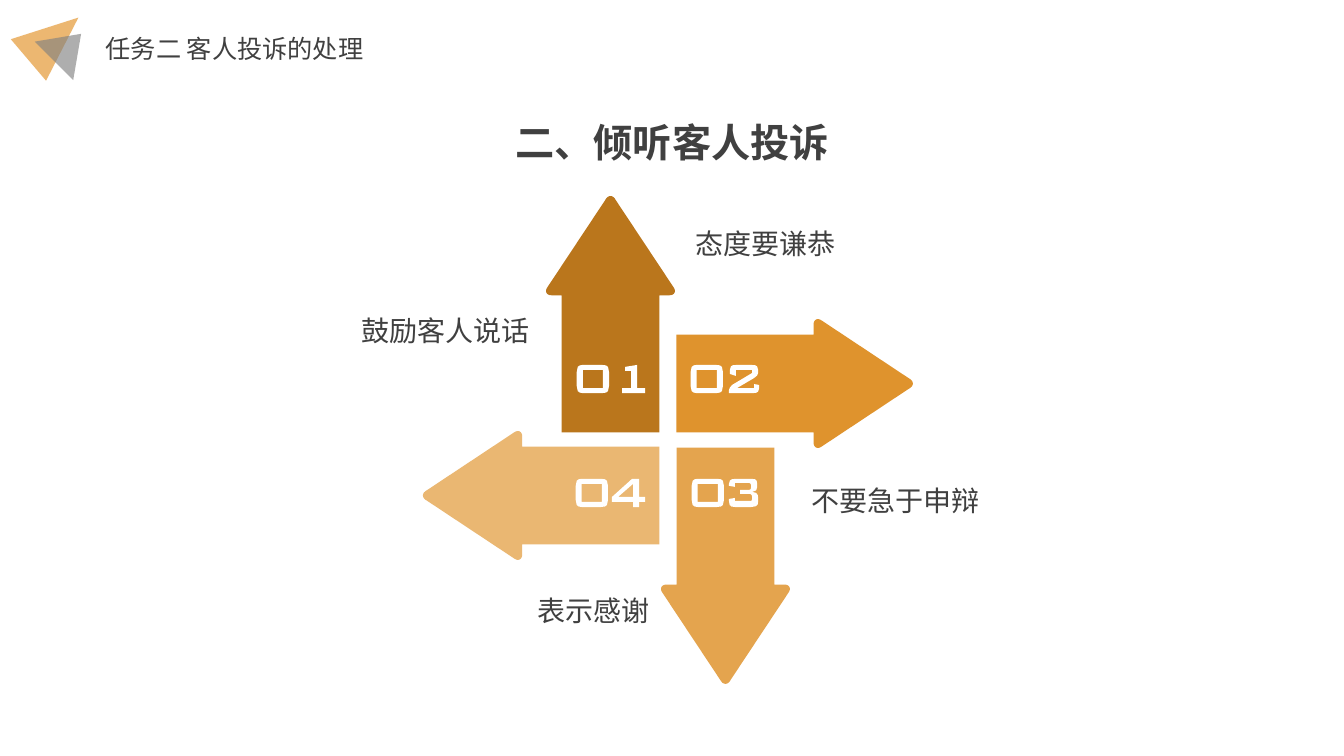
from lxml import etree
from pptx import Presentation
from pptx.dml.color import RGBColor
from pptx.enum.shapes import MSO_SHAPE
from pptx.enum.text import MSO_AUTO_SIZE, PP_ALIGN
from pptx.oxml.ns import qn
from pptx.util import Inches, Pt

LEFT, CENTER, RIGHT = PP_ALIGN.LEFT, PP_ALIGN.CENTER, PP_ALIGN.RIGHT
TRIANGLE = MSO_SHAPE.ISOSCELES_TRIANGLE
GROW = MSO_AUTO_SIZE.SHAPE_TO_FIT_TEXT

INK = RGBColor(0x40, 0x40, 0x40)
WHITE = RGBColor(0xFF, 0xFF, 0xFF)
GRAY = RGBColor(0x80, 0x80, 0x80)
ORANGE = RGBColor(0xE1, 0x8E, 0x1F)
BROWN = RGBColor(0xBA, 0x76, 0x1C)
AMBER = RGBColor(0xDF, 0x93, 0x2D)
HONEY = RGBColor(0xE4, 0xA4, 0x4E)
SAND = RGBColor(0xEA, 0xB7, 0x72)

prs = Presentation()
prs.slide_width, prs.slide_height = Inches(13.33), Inches(7.5)
slide = prs.slides.add_slide(prs.slide_layouts[6])


def add_outline(contours, color):
    """Draw closed contours, given in inches, as one filled shape."""
    contours = [[(Inches(x), Inches(y)) for x, y in c] for c in contours]
    builder = slide.shapes.build_freeform(*contours[0][0])
    builder.add_line_segments(contours[0][1:], close=True)
    for contour in contours[1:]:
        builder.move_to(*contour[0])
        builder.add_line_segments(contour[1:], close=True)
    outline = builder.convert_to_shape()
    outline.shadow.inherit = False
    outline.fill.solid()
    outline.fill.fore_color.rgb = color
    outline.line.fill.background()


def add_text(text, box, size, align=LEFT, spacing=1.0, font="Arial", bold=False):
    frame = slide.shapes.add_textbox(*map(Inches, box)).text_frame
    frame.word_wrap = True
    frame.auto_size = GROW
    frame.text = text
    paragraph = frame.paragraphs[0]
    paragraph.alignment = align
    paragraph.line_spacing = spacing
    run = paragraph.runs[0]
    run.font.name, run.font.size, run.font.bold = font, Pt(size), bold
    run.font.color.rgb = INK


# Header: two translucent triangles and the task name
for box, angle, color in [((0.26, 0.06, 0.54, 0.65), 49.7, ORANGE),
                          ((0.40, 0.28, 0.54, 0.38), 45.1, GRAY)]:
    triangle = slide.shapes.add_shape(TRIANGLE, *map(Inches, box))
    triangle.rotation = angle
    triangle.shadow.inherit = False
    triangle.fill.solid()
    triangle.fill.fore_color.rgb = color
    triangle.line.fill.background()
    tint = triangle.fill._xPr.find(qn("a:solidFill"))[0]
    etree.SubElement(tint, qn("a:alpha")).set("val", "63000")
add_text("任务二 客人投诉的处理", (0.95, 0.28, 7.8, 0.4), 18, font="DejaVu Sans")

# Upward arrow, measured from its inner corner, with rounded head corners
head_corners = [
    [(0.10, -1.36), (0.15, -1.36), (0.17, -1.40), (0.14, -1.44)],
    [(-0.43, -2.30), (-0.46, -2.36), (-0.51, -2.36), (-0.54, -2.30)],
    [(-1.11, -1.44), (-1.14, -1.40), (-1.12, -1.36), (-1.07, -1.36)],
]
STEPS = 8
arrow = [(0, 0), (0, -1.36)]
for corner in head_corners:
    for step in range(STEPS + 1):
        t = step / STEPS
        weights = ((1 - t) ** 3, 3 * t * (1 - t) ** 2, 3 * t ** 2 * (1 - t), t ** 3)
        arrow.append(tuple(sum(w * p[axis] for w, p in zip(weights, corner))
                           for axis in (0, 1)))
arrow += [(-0.97, -1.36), (-0.97, 0)]

# Pinwheel: each arrow is the previous one turned by a quarter
for corner_x, corner_y, color in [(6.54, 4.29, BROWN), (6.71, 4.29, AMBER),
                                  (6.71, 4.44, HONEY), (6.54, 4.43, SAND)]:
    add_outline([[(corner_x + x, corner_y + y) for x, y in arrow]], color)
    arrow = [(-y, x) for x, y in arrow]

# Wide digits, in hundredths of an inch
digits = {
    "0": [[(0, 7), (1, 2), (3, 0.5), (6, 0), (25, 0), (29, 0.5), (31, 2), (32, 7),
           (32, 21), (31, 26), (29, 27.5), (25, 28), (6, 28), (3, 27.5), (1, 26),
           (0, 21)],
          [(6, 23), (26, 23), (26, 5), (6, 5)]],
    "1": [[(3, 2), (15, 0), (15, 23), (23, 23), (23, 28), (0, 28), (0, 23),
           (9, 23), (9, 6), (3, 6)]],
    "2": [[(1, 5), (2, 1.5), (4, 0.3), (8, 0), (22, 0), (26, 0.3), (28, 1.5),
           (29, 5), (29, 8), (28, 10.5), (25, 13), (8, 23), (25, 23), (25, 19),
           (30, 20), (30, 23), (29, 26.5), (27, 27.7), (24, 28), (0, 28), (0, 25),
           (1, 22.5), (3, 20), (23, 8), (23, 5), (7, 5), (7, 11), (1, 9)]],
    "3": [[(6, 28), (2.5, 27.5), (0.7, 26), (0, 22), (0, 20), (6, 19), (6, 22),
           (21, 22), (22.5, 21.7), (23, 20), (23, 18), (22.5, 16), (21, 15),
           (11, 15), (11, 11), (20, 11), (21.5, 10.5), (22, 8), (22, 7),
           (21.5, 5), (20, 4), (6, 4), (6, 8), (0, 7), (0, 5), (1, 1.7),
           (3, 0.4), (7, 0), (22, 0), (26, 0.5), (27.5, 2), (28, 5), (28, 8),
           (27, 11.5), (23, 13), (27, 14), (28.5, 16), (29, 19), (29, 22),
           (28.5, 25.5), (26.5, 27.3), (22, 28)]],
    "4": [[(21, 28), (21, 23), (0, 23), (0, 18), (20, 0), (27, 0), (27, 18),
           (33, 18), (33, 23), (27, 23), (27, 28)],
          [(21, 18), (21, 5), (6, 18)]],
}
for number, tens_left, ones_left, top in [("01", 5.72, 6.17, 3.62),
                                          ("02", 6.85, 7.23, 3.62),
                                          ("03", 6.86, 7.23, 4.75),
                                          ("04", 5.71, 6.07, 4.75)]:
    for digit, left in zip(number, (tens_left, ones_left)):
        add_outline([[(left + x / 100, top + y / 100) for x, y in contour]
                     for contour in digits[digit]], WHITE)

# Advice beside the arrows
for advice, box, align in [("表示感谢", (2.8, 5.74, 3.74, 0.5), RIGHT),
                           ("态度要谦恭", (6.8, 2.1, 3.95, 0.5), LEFT),
                           ("鼓励客人说话", (2.8, 2.96, 2.55, 0.5), RIGHT),
                           ("不要急于申辩", (7.95, 4.65, 3.98, 0.5), LEFT)]:
    add_text(advice, box, 20, align, 1.3)

# Title
add_text("二、倾听客人投诉", (3.54, 0.89, 6.25, 0.72), 28, CENTER, 1.5, bold=True)

prs.save("out.pptx")
